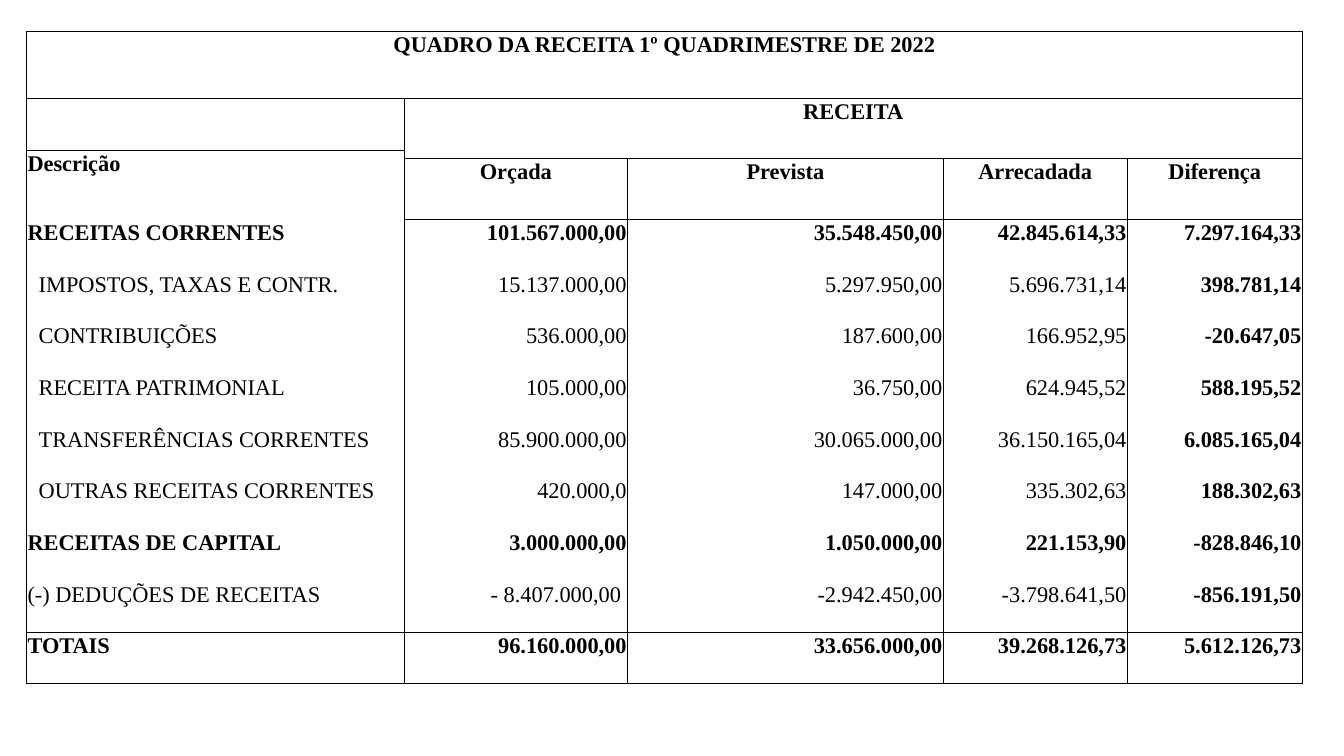
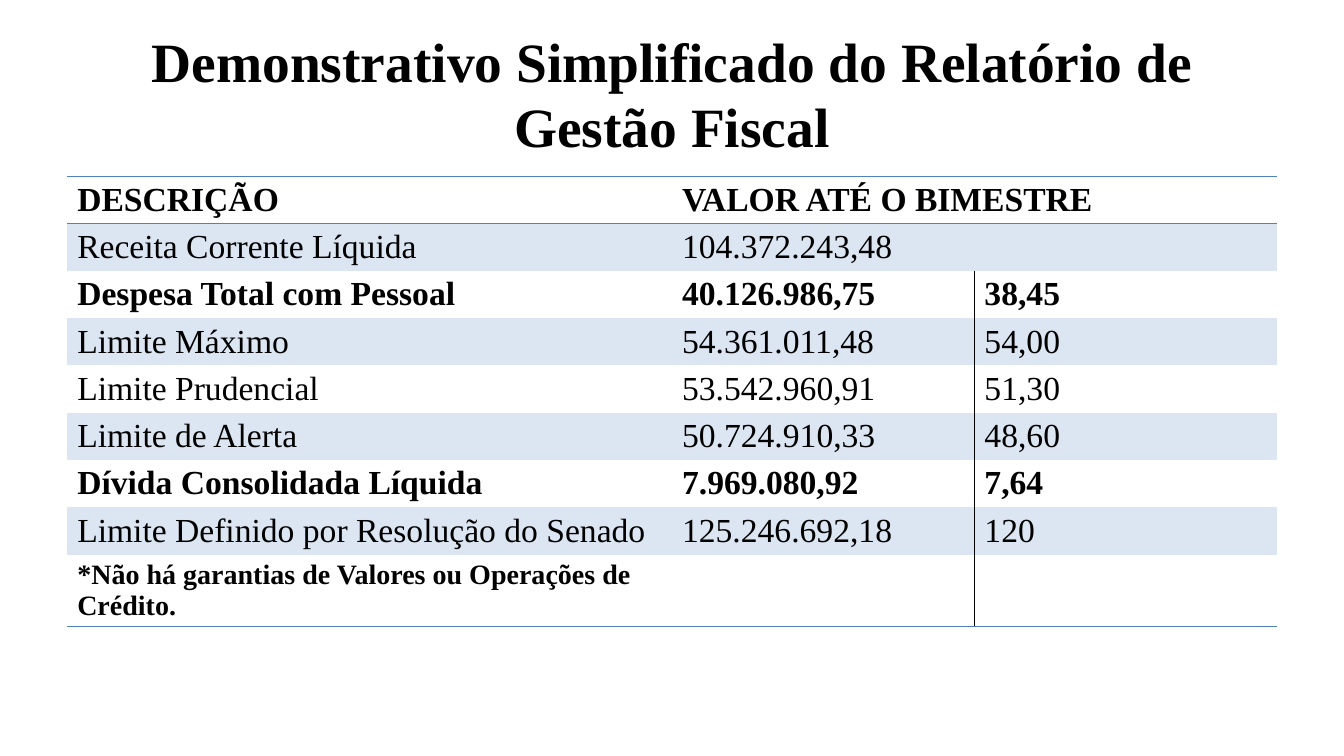
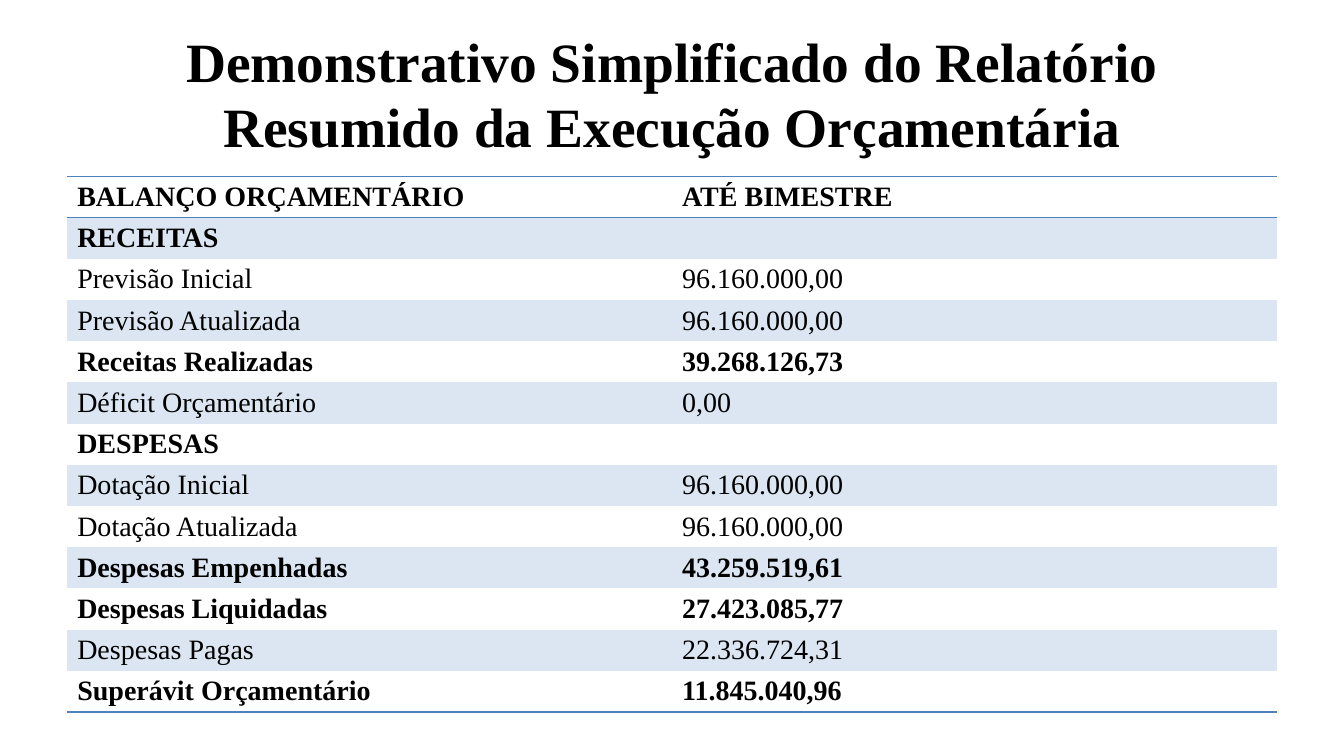
import pptx
import pptx.dml.color
import pptx.enum.text
import pptx.oxml
import pptx.oxml.ns
import pptx.util

Pt = pptx.util.Pt
RGBColor = pptx.dml.color.RGBColor
ALIGN = pptx.enum.text.PP_ALIGN
ANCHOR = pptx.enum.text.MSO_ANCHOR

BLACK = RGBColor(0x00, 0x00, 0x00)
BLUE = RGBColor(0x4F, 0x81, 0xBD)
PALE_BLUE = RGBColor(0xDC, 0xE6, 0xF2)
FONT = "Times New Roman"
PLAIN_STYLE = "{2D5ABB26-0587-4C30-8999-92F81FD0307C}"
TITLE_BOX = (48, 21.6, 864, 90)
REPORT_BOX = (48, 126, 864)

REVENUE_HEADS = ["Orçada", "Prevista", "Arrecadada", "Diferença"]
REVENUE_COLS = [269.8, 159.5, 225.5, 131.5, 125]
REVENUE_ROWS = [47.9, 37, 5.9, 43.9] + [36.9] * 8 + [36.3]
# indent level, description, values
REVENUE = [
    (0, "RECEITAS CORRENTES", "101.567.000,00", "35.548.450,00", "42.845.614,33", "7.297.164,33"),
    (1, "IMPOSTOS, TAXAS E CONTR.", "15.137.000,00", "5.297.950,00", "5.696.731,14", "398.781,14"),
    (1, "CONTRIBUIÇÕES", "536.000,00", "187.600,00", "166.952,95", "-20.647,05"),
    (1, "RECEITA PATRIMONIAL", "105.000,00", "36.750,00", "624.945,52", "588.195,52"),
    (1, "TRANSFERÊNCIAS CORRENTES", "85.900.000,00", "30.065.000,00", "36.150.165,04",
     "6.085.165,04"),
    (1, "OUTRAS RECEITAS CORRENTES", "420.000,0", "147.000,00", "335.302,63", "188.302,63"),
    (0, "RECEITAS DE CAPITAL", "3.000.000,00", "1.050.000,00", "221.153,90", "-828.846,10"),
    (0, "(-) DEDUÇÕES DE RECEITAS", "- 8.407.000,00", "-2.942.450,00", "-3.798.641,50",
     "-856.191,50"),
    (0, "TOTAIS", "96.160.000,00", "33.656.000,00", "39.268.126,73", "5.612.126,73"),
]

FISCAL_NOTE = "*Não há garantias de Valores ou Operações de Crédito."
FISCAL = [
    ("DESCRIÇÃO", "VALOR ATÉ O BIMESTRE", ""),
    ("Receita Corrente Líquida", "104.372.243,48", ""),
    ("Despesa Total com Pessoal", "40.126.986,75", "38,45"),
    ("Limite Máximo", "54.361.011,48", "54,00"),
    ("Limite Prudencial", "53.542.960,91", "51,30"),
    ("Limite de Alerta", "50.724.910,33", "48,60"),
    ("Dívida Consolidada Líquida", "7.969.080,92", "7,64"),
    ("Limite Definido por Resolução do Senado", "125.246.692,18", "120"),
    (FISCAL_NOTE, "", ""),
]
BUDGET = [
    ("BALANÇO ORÇAMENTÁRIO", "ATÉ BIMESTRE"),
    ("RECEITAS", ""),
    ("Previsão Inicial", "96.160.000,00"),
    ("Previsão Atualizada", "96.160.000,00"),
    ("Receitas Realizadas", "39.268.126,73"),
    ("Déficit Orçamentário", "0,00"),
    ("DESPESAS", ""),
    ("Dotação Inicial", "96.160.000,00"),
    ("Dotação Atualizada", "96.160.000,00"),
    ("Despesas Empenhadas", "43.259.519,61"),
    ("Despesas Liquidadas", "27.423.085,77"),
    ("Despesas Pagas", "22.336.724,31"),
    ("Superávit Orçamentário", "11.845.040,96"),
]


def style(p, size, bold, align):
    p.alignment = align
    for r in p.runs:
        r.font.name = FONT
        r.font.size = Pt(size)
        r.font.bold = bold
        r.font.color.rgb = BLACK


def write(cell, text, size, bold, align=ALIGN.LEFT):
    if text:
        cell.text_frame.text = text
        style(cell.text_frame.paragraphs[0], size, bold, align)


def set_borders(cell, width, sides):
    """Draw the cell's edges; sides maps L, R, T, B to a colour."""
    tcPr = cell._tc.get_or_add_tcPr()
    for i, side in enumerate(s for s in "LRTB" if s in sides):
        tcPr.insert(i, pptx.oxml.parse_xml(
            f'<a:ln{side} {pptx.oxml.ns.nsdecls("a")} w="{Pt(width)}">'
            f'<a:solidFill><a:srgbClr val="{sides[side]}"/></a:solidFill></a:ln{side}>'))


def add_plain_table(slide, left, top, cols, rows):
    frame = slide.shapes.add_table(len(rows), len(cols), Pt(left), Pt(top),
                                   Pt(sum(cols)), Pt(sum(rows)))
    table = frame.table
    table.first_row = table.horz_banding = False
    table._tbl.tblPr.find(pptx.oxml.ns.qn("a:tableStyleId")).text = PLAIN_STYLE
    for column, width in zip(table.columns, cols):
        column.width = Pt(width)
    for row, height in zip(table.rows, rows):
        row.height = Pt(height)
    for cell in table.iter_cells():
        cell.fill.background()
    return table


def add_title(slide, text):
    title = slide.shapes.title
    title.left, title.top, title.width, title.height = map(Pt, TITLE_BOX)
    tf = title.text_frame
    tf.text = text
    tf.word_wrap = True
    tf.auto_size = pptx.enum.text.MSO_AUTO_SIZE.NONE
    tf.vertical_anchor = ANCHOR.MIDDLE
    tf.margin_top = tf.margin_bottom = 0
    p = tf.paragraphs[0]
    p.line_spacing = Pt(47)
    style(p, 39.6, True, ALIGN.CENTER)


def rule_revenue_table(table):
    last_row, last_col = len(REVENUE_ROWS) - 1, len(REVENUE_COLS) - 1
    for r in range(last_row + 1):
        for c in range(last_col + 1):
            cell = table.cell(r, c)
            if cell.is_spanned and c > 0:
                sides = "R" if c == last_col else ""
            else:
                sides = "LR"
                if r in (0, 1, last_row) or (r == 3 and c > 0):
                    sides += "T"
                if r in (0, last_row - 1, last_row) or (r == 1 and c > 0):
                    sides += "B"
            set_borders(cell, 0.5, dict.fromkeys(sides, BLACK))


def add_revenue_table(slide, left, top):
    table = add_plain_table(slide, left, top, REVENUE_COLS, REVENUE_ROWS)
    for cell in table.iter_cells():
        cell.margin_left = cell.margin_right = cell.margin_top = Pt(0.7)
        cell.margin_bottom = 0
    for first, last in [((0, 0), (0, 4)), ((1, 1), (2, 4)), ((2, 0), (3, 0))]:
        table.cell(*first).merge(table.cell(*last))
    write(table.cell(0, 0), "QUADRO DA RECEITA 1º QUADRIMESTRE DE 2022", 16, True, ALIGN.CENTER)
    write(table.cell(1, 1), "RECEITA", 16, True, ALIGN.CENTER)
    write(table.cell(2, 0), "Descrição", 16, True)
    for c, head in enumerate(REVENUE_HEADS, 1):
        write(table.cell(3, c), head, 16, True, ALIGN.CENTER)
    for r, (level, name, *values) in enumerate(REVENUE, 4):
        bold = level == 0 and not name.startswith("(-)")
        write(table.cell(r, 0), name, 16, bold)
        table.cell(r, 0).margin_left = Pt(0.7 + 8 * level)
        for c, value in enumerate(values, 1):
            write(table.cell(r, c), value, 16, bold or c == len(values), ALIGN.RIGHT)
            if value.startswith("- "):
                table.cell(r, c).margin_right = Pt(4.7)
    rule_revenue_table(table)


def add_report_table(slide, box, data, shares, heights, size, bold_rows):
    """Banded table with blue rules; a third column is set off by a black line."""
    left, top, width = box
    table = add_plain_table(slide, left, top, [width * s for s in shares], heights)
    last = len(data) - 1
    for r, values in enumerate(data):
        for c, value in enumerate(values):
            cell = table.cell(r, c)
            write(cell, value, 20 if value == FISCAL_NOTE else size, r in bold_rows)
            sides = {}
            if r == 0:
                sides["T"] = BLUE
            if r in (0, last):
                sides["B"] = BLUE
            if len(values) == 3 and r > 1 and c > 0:
                sides["R" if c == 1 else "L"] = BLACK
            set_borders(cell, 1, sides)
            if r % 2:
                cell.fill.solid()
                cell.fill.fore_color.rgb = PALE_BLUE
        if len(values) == 3 and r < 2:
            table.cell(r, 1).merge(table.cell(r, 2))


def main():
    prs = pptx.Presentation()
    prs.slide_width, prs.slide_height = Pt(960), Pt(540)
    title_only, blank = prs.slide_layouts[5], prs.slide_layouts[6]

    add_revenue_table(prs.slides.add_slide(blank), 19, 22.3)

    slide = prs.slides.add_slide(title_only)
    add_title(slide, "Demonstrativo Simplificado do Relatório de Gestão Fiscal")
    add_report_table(slide, REPORT_BOX, FISCAL, [0.5, 0.25, 0.25],
                     [33.75] * 8 + [51.4], 24, {0, 2, 6, 8})

    slide = prs.slides.add_slide(title_only)
    add_title(slide, "Demonstrativo Simplificado do Relatório Resumido da Execução Orçamentária")
    add_report_table(slide, REPORT_BOX, BUDGET, [0.5, 0.5],
                     [29.45] * 13, 20, {0, 1, 4, 6, 9, 10, 12})

    prs.save("out.pptx")


if __name__ == "__main__":
    main()
